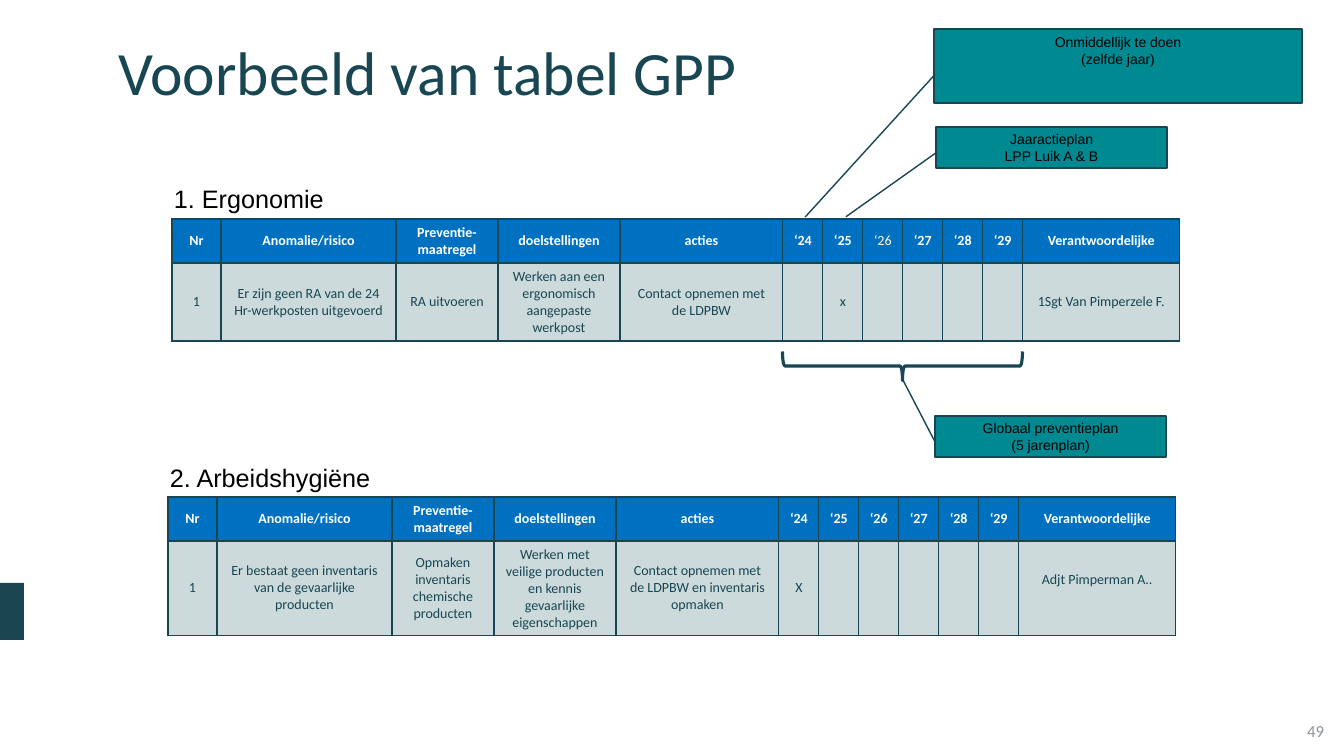
from lxml import etree
from pptx import Presentation
from pptx import util as u
from pptx.dml.color import RGBColor
from pptx.enum import shapes, text
from pptx.oxml import parse_xml

PX = 914400 / 100.8
COLORS = {"ink": "184652", "marker": "1A4652", "header": "0070C0", "body": "CCDADC",
          "callout": "008991", "white": "FFFFFF", "black": "000000", "number": "8C9498"}
ALIGN = text.PP_ALIGN
ANCHOR = text.MSO_ANCHOR
NS = "http://schemas.openxmlformats.org/drawingml/2006/main"


def box(*lengths):
    return [u.Emu(round(n * PX)) for n in lengths]


def style(p, size, color, font="Calibri", align=ALIGN.LEFT, bold=False):
    p.alignment = align
    p.font.size = u.Pt(size)
    p.font.name = font
    p.font.bold = bold
    p.font.color.rgb = RGBColor.from_string(COLORS[color])


prs = Presentation()
prs.slide_width, prs.slide_height = box(1344, 756)
s = prs.slides.add_slide(prs.slide_layouts[5])

title = s.shapes.title
title.left, title.top, title.width, title.height = box(108, 37, 1210, 126)
tf = title.text_frame
tf.text = "Voorbeeld van tabel GPP"
tf.auto_size = text.MSO_AUTO_SIZE.NONE
tf.vertical_anchor = ANCHOR.TOP
tf.paragraphs[0].line_spacing = 0.9
style(tf.paragraphs[0], 44, "ink")

marker = s.shapes.add_shape(shapes.MSO_SHAPE.RECTANGLE, *box(0, 583, 24, 57))
marker.shadow.inherit = False
marker.fill.solid()
marker.fill.fore_color.rgb = RGBColor.from_string(COLORS["marker"])
marker.line.fill.background()

labels = [
    ("1. Ergonomie", (164, 178, 293, 40), 18, "black", "Arial", ALIGN.LEFT),
    ("2. Arbeidshygiëne", (160, 457, 293, 40), 18, "black", "Arial", ALIGN.LEFT),
    ("49", (1032, 711, 302, 40), 12, "number", "Calibri", ALIGN.RIGHT),
]
for label, place, size, color, font, align in labels:
    tf = s.shapes.add_textbox(*box(*place)).text_frame
    tf.word_wrap = True
    tf.vertical_anchor = ANCHOR.MIDDLE
    tf.text = label
    style(tf.paragraphs[0], size, color, font, align)

years = [f"‘{year}" for year in range(24, 30)]
header = ["Nr", "Anomalie/risico", "Preventie-maatregel", "doelstellingen", "acties",
          *years, "Verantwoordelijke"]
widths = [49, 175, 102, 122, 163] + [40] * 6 + [157]
tables = [
    (172, 219, 78, ["1", "Er zijn geen RA van de 24 Hr-werkposten uitgevoerd", "RA uitvoeren",
                    "Werken aan een ergonomisch aangepaste werkpost",
                    "Contact opnemen met de LDPBW",
                    "", "x", "", "", "", "", "1Sgt Van Pimperzele F."]),
    (168, 497, 94, ["1", "Er bestaat geen inventaris van de gevaarlijke producten",
                    "Opmaken inventaris chemische producten",
                    "Werken met veilige producten en kennis gevaarlijke eigenschappen",
                    "Contact opnemen met de LDPBW en inventaris opmaken",
                    "X", "", "", "", "", "", "Adjt Pimperman A.."]),
]
grids = []
for left, top, body_height, body in tables:
    heights = [44, body_height]
    frame = s.shapes.add_table(2, len(widths), *box(left, top, sum(widths), sum(heights)))
    table = frame.table
    grids.append(table)
    for column, width in zip(table.columns, box(*widths)):
        column.width = width
    for row, height in zip(table.rows, box(*heights)):
        row.height = height
    for r, values in enumerate([header, body]):
        for c, value in enumerate(values):
            cell = table.cell(r, c)
            cell.text = value
            cell.vertical_anchor = ANCHOR.MIDDLE
            style(cell.text_frame.paragraphs[0], 10, "ink" if r else "white",
                  align=ALIGN.CENTER, bold=r == 0)
            tc_pr = cell._tc.get_or_add_tcPr()
            for side in "LRTB":
                tc_pr.append(parse_xml(
                    f'<a:ln{side} xmlns:a="{NS}" w="12700"><a:solidFill>'
                    f'<a:srgbClr val="{COLORS["ink"]}"/></a:solidFill></a:ln{side}>'))
            cell.fill.solid()
            cell.fill.fore_color.rgb = RGBColor.from_string(COLORS["body" if r else "header"])
grids[0].cell(0, 7).text_frame.paragraphs[0].font.bold = False
grids[1].cell(1, 11).margin_bottom = box(22)[0]

callouts = [
    ("Jaaractieplan\vLPP Luik A & B", (936, 127, 231, 41), (0.63, 0, 2.19, -0.39), ANCHOR.MIDDLE),
    ("Onmiddellijk te doen\v(zelfde jaar)", (934, 29, 368, 74), (0.63, 0, 2.54, -0.35), ANCHOR.TOP),
    ("Globaal preventieplan\v(5 jarenplan)", (935, 416, 231, 41), (0.63, 0, -0.89, -0.14), ANCHOR.MIDDLE),
]
for label, place, pointer, anchor in callouts:
    sp = s.shapes.add_shape(shapes.MSO_SHAPE.LINE_CALLOUT_1, *box(*place))
    sp.shadow.inherit = False
    for i, value in enumerate(pointer):
        sp.adjustments[i] = value
    sp.fill.solid()
    sp.fill.fore_color.rgb = RGBColor.from_string(COLORS["callout"])
    sp.line.color.rgb = RGBColor.from_string(COLORS["ink"])
    sp.line.width = u.Pt(1)
    tf = sp.text_frame
    tf.word_wrap = True
    tf.vertical_anchor = anchor
    tf.paragraphs[0].text = label
    style(tf.paragraphs[0], 10, "black", "Arial", ALIGN.CENTER)

brace = s.shapes.add_shape(shapes.MSO_SHAPE.RIGHT_BRACE, *box(888, 246, 29, 240))
brace.shadow.inherit = False
brace.rotation = 90
brace.adjustments[0] = 0.08
brace.adjustments[1] = 0.5
brace.fill.background()
brace.line.color.rgb = RGBColor.from_string(COLORS["ink"])
brace.line.width = u.Pt(2.25)

prs.save("out.pptx")
